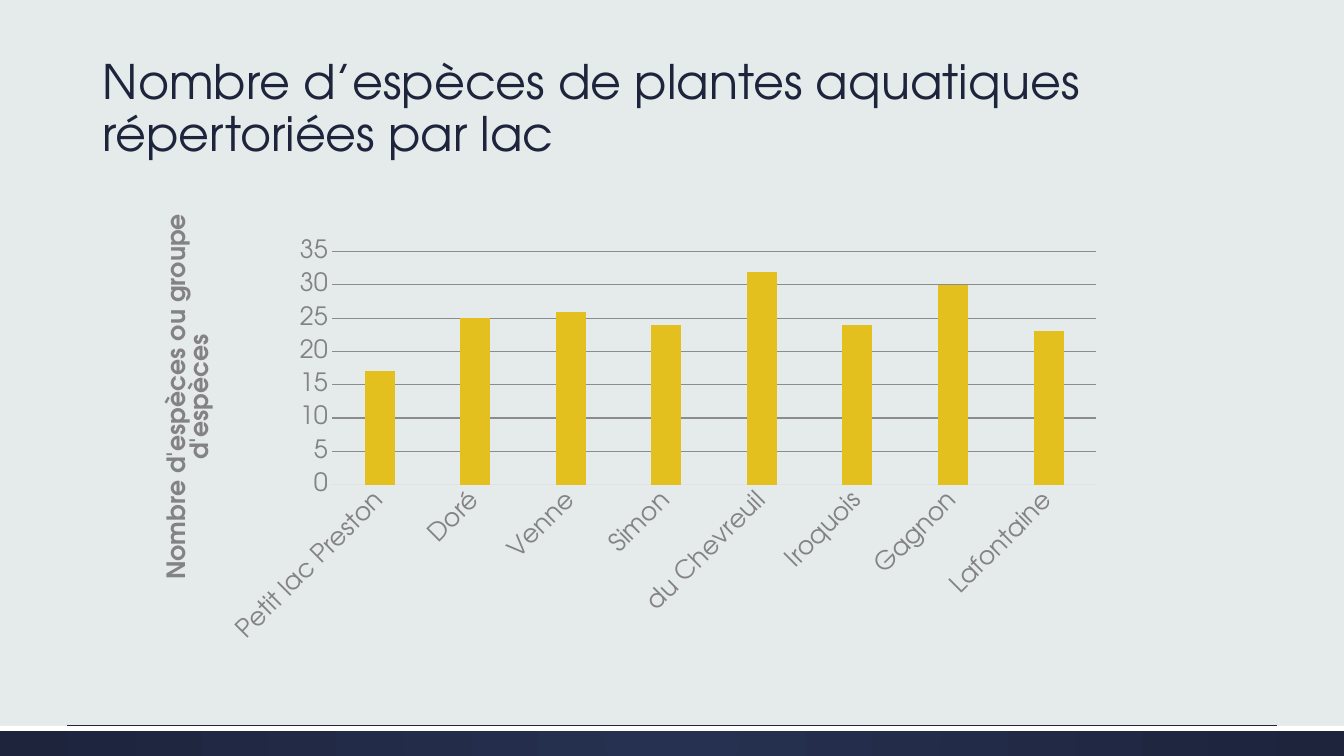
"""Build a slide charting the aquatic plant species listed in each lake."""
from dataclasses import dataclass

from lxml.etree import SubElement
from pptx import Presentation
from pptx.chart.data import CategoryChartData
from pptx.dml.color import RGBColor
from pptx.enum.chart import XL_CHART_TYPE, XL_TICK_MARK
from pptx.enum.shapes import MSO_CONNECTOR, MSO_SHAPE
from pptx.enum.text import MSO_ANCHOR
from pptx.oxml import parse_xml
from pptx.oxml.ns import nsdecls, qn
from pptx.util import Pt

COLORS = {
    "back": "E5EAEA", "navy": "1D243C", "blue": "263050", "white": "FFFFFF",
    "gold": "E3C01E", "label": "838383", "grid": "8C8C8C", "axis": "E2E2E2",
}
FACE = "TeX Gyre Adventor"
LAKES = {
    "Petit lac Preston": 17, "Doré": 25, "Venne": 26, "Simon": 24,
    "du Chevreuil": 32, "Iroquois": 24, "Gagnon": 30, "Lafontaine": 23,
}


@dataclass
class Band:
    top: float
    height: float
    colors: tuple[str, ...]


BANDS = [Band(518.4, 21.6, ("blue", "navy")), Band(518.4, 3.6, ("white",))]


def color(name: str) -> RGBColor:
    return RGBColor.from_string(COLORS[name])


def style(font, size: float, tint: str, bold: bool = False) -> None:
    font.name, font.size, font.bold = FACE, Pt(size), bold
    font.color.rgb = color(tint)


def draw_band(slide, band: Band) -> None:
    shape = slide.shapes.add_shape(
        MSO_SHAPE.RECTANGLE, 0, Pt(band.top), Pt(960), Pt(band.height))
    shape.shadow.inherit = False
    shape.line.fill.background()
    if len(band.colors) == 1:
        shape.fill.solid()
        shape.fill.fore_color.rgb = color(band.colors[0])
        return
    shape.fill.gradient()
    for stop, name in zip(shape.fill.gradient_stops, band.colors):
        stop.color.rgb = color(name)
    grad = shape.element.spPr.find(qn("a:gradFill"))
    grad.replace(grad.find(qn("a:lin")), parse_xml(
        f'<a:path {nsdecls("a")} path="circle">'
        '<a:fillToRect l="50000" t="50000" r="50000" b="50000"/></a:path>'))


def draw_rule(slide) -> None:
    rule = slide.shapes.add_connector(
        MSO_CONNECTOR.STRAIGHT, Pt(48), Pt(518), Pt(912), Pt(518))
    rule.line.color.rgb = color("navy")
    rule.line.width = Pt(0.75)
    SubElement(rule.element.spPr, qn("a:effectLst"))


def draw_title(slide) -> None:
    box = slide.shapes.add_textbox(Pt(66.24), Pt(21.6), Pt(748.8), Pt(97.2))
    frame = box.text_frame
    frame.word_wrap = True
    frame.vertical_anchor = MSO_ANCHOR.BOTTOM
    frame.text = "Nombre d’espèces de plantes aquatiques répertoriées par lac"
    line = frame.paragraphs[0]
    line.line_spacing = 0.9
    style(line.runs[0].font, 34, "navy")


def layout(**places: float):
    parts = "".join(f'<c:{key}Mode val="edge"/>' for key in ("x", "y"))
    parts += "".join(f'<c:{key} val="{val}"/>' for key, val in places.items())
    target = '<c:layoutTarget val="inner"/>' if "w" in places else ""
    return parse_xml(
        f'<c:layout {nsdecls("c")}><c:manualLayout>{target}{parts}'
        '</c:manualLayout></c:layout>')


def clear(parent) -> None:
    for old in parent.findall(qn("c:layout")):
        parent.remove(old)


def draw_chart(slide) -> None:
    data = CategoryChartData()
    data.categories = list(LAKES)
    data.add_series("Series 1", list(LAKES.values()))
    chart = slide.shapes.add_chart(
        XL_CHART_TYPE.COLUMN_CLUSTERED,
        Pt(69.12), Pt(116.64), Pt(743.04), Pt(367.2), data).chart
    chart.has_legend = chart.has_title = False
    style(chart.font, 18, "label")
    plot = chart.plots[0]
    plot.gap_width, plot.overlap = 219, -27
    plot.vary_by_categories = False
    fill = plot.series[0].format.fill
    fill.solid()
    fill.fore_color.rgb = color("gold")

    names, counts = chart.category_axis, chart.value_axis
    for axis in (names, counts):
        axis.major_tick_mark = axis.minor_tick_mark = XL_TICK_MARK.NONE
        style(axis.tick_labels.font, 18, "label")
    body = names.tick_labels.font and names._element.find(
        f'{qn("c:txPr")}/{qn("a:bodyPr")}')
    body.set("rot", "-2700000")
    body.set("vert", "horz")
    counts.minimum_scale, counts.maximum_scale, counts.major_unit = 0, 35, 5
    counts.format.line.fill.background()
    counts.has_major_gridlines = True
    for line, tint in ((names.format.line, "axis"),
                       (counts.major_gridlines.format.line, "grid")):
        line.color.rgb = color(tint)
        line.width = Pt(0.75)

    title = counts.axis_title
    title.text_frame.text = "Nombre d'espèces ou groupe d'espèces"
    style(title.text_frame.paragraphs[0].runs[0].font, 18, "label", True)
    turn = title.element.find(f'.//{qn("a:bodyPr")}')
    turn.set("rot", "-5400000")
    turn.set("vert", "horz")
    clear(title.element)
    title.element.find(qn("c:tx")).addnext(layout(x=0.06, y=0.09))
    area = chart.element.find(f'.//{qn("c:plotArea")}')
    clear(area)
    area.insert(0, layout(x=0.226, y=0.172, w=0.735, h=0.453))


def main() -> None:
    deck = Presentation()
    deck.slide_width, deck.slide_height = Pt(960), Pt(540)
    slide = deck.slides.add_slide(deck.slide_layouts[6])
    slide.background.fill.solid()
    slide.background.fill.fore_color.rgb = color("back")
    for band in BANDS:
        draw_band(slide, band)
    draw_rule(slide)
    draw_title(slide)
    draw_chart(slide)
    deck.save("out.pptx")


if __name__ == "__main__":
    main()
